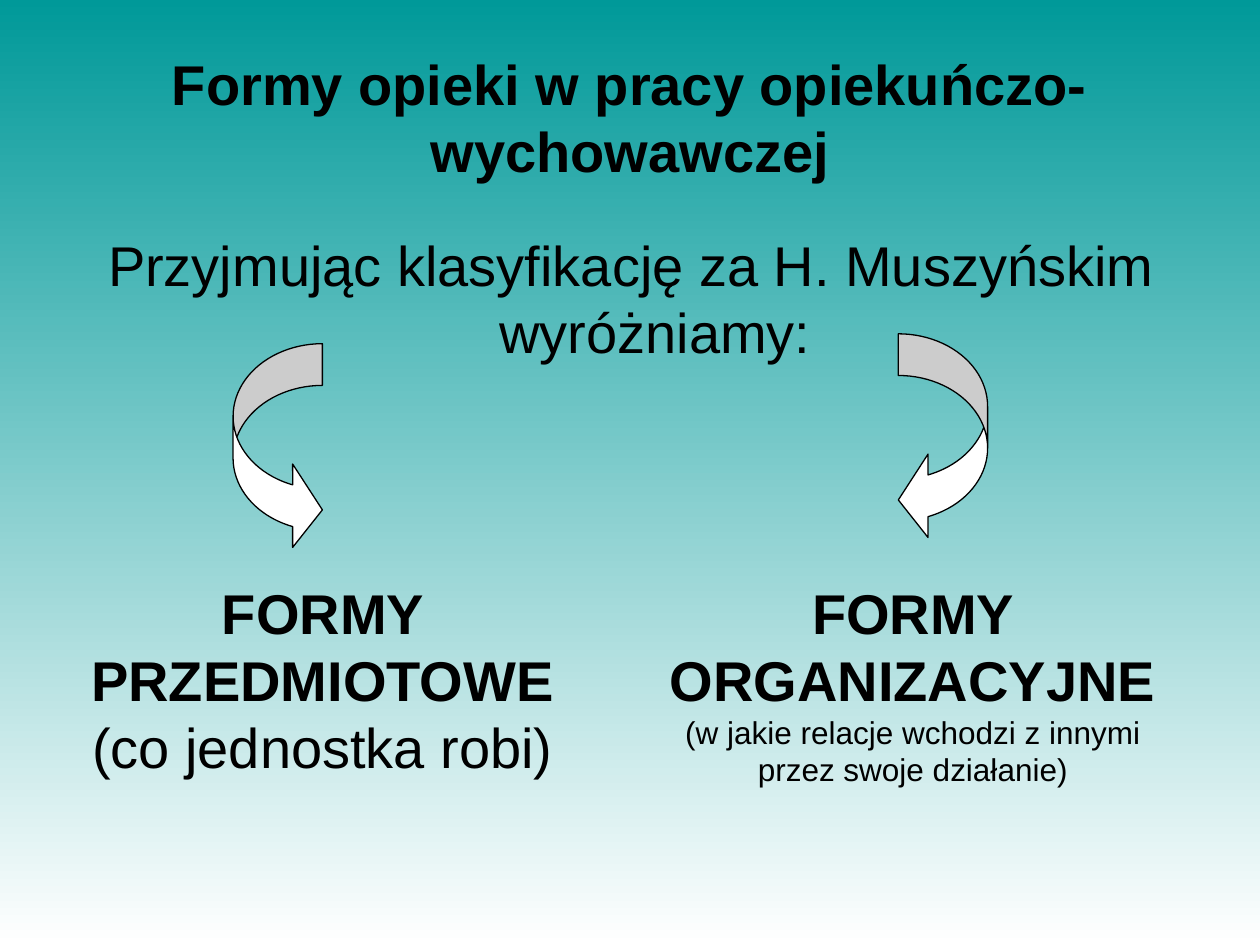
from dataclasses import dataclass

from pptx import Presentation
from pptx.dml.color import RGBColor
from pptx.enum.shapes import MSO_SHAPE
from pptx.enum.text import MSO_ANCHOR, PP_ALIGN
from pptx.util import Cm, Pt


@dataclass(frozen=True)
class Theme:
    font: str = "Arial"
    text: RGBColor = RGBColor(0x00, 0x00, 0x00)
    teal: RGBColor = RGBColor(0x00, 0x99, 0x99)
    white: RGBColor = RGBColor(0xFF, 0xFF, 0xFF)
    large: Pt = Pt(32)
    small: Pt = Pt(18)
    outline: Pt = Pt(0.75)


THEME = Theme()


def paint_background(page):
    """Vertical gradient from teal down to white."""
    fill = page.background.fill
    fill.gradient()
    fill.gradient_angle = 270
    for stop, color in zip(fill.gradient_stops, (THEME.teal, THEME.white)):
        stop.color.rgb = color


def add_span(para, text, size=THEME.large, bold=False):
    span = para.add_run()
    span.text = text
    span.font.name = THEME.font
    span.font.size = size
    span.font.bold = bold
    span.font.color.rgb = THEME.text


def add_text_box(page, left, top, width, height, anchor=MSO_ANCHOR.TOP):
    """Add a wrapping text box and return its centred paragraph."""
    box = page.shapes.add_textbox(Cm(left), Cm(top), Cm(width), Cm(height))
    frame = box.text_frame
    frame.word_wrap = True
    frame.vertical_anchor = anchor
    para = frame.paragraphs[0]
    para.alignment = PP_ALIGN.CENTER
    return para


def add_form(page, left, width, name, note, note_size):
    """Bold name of a form with its explanation on the next line."""
    para = add_text_box(page, left, 11.53, width, 4.4)
    add_span(para, name, bold=True)
    para.add_line_break()
    add_span(para, note, note_size)


def add_curved_arrow(page, kind, left, top):
    arrow = page.shapes.add_shape(kind, Cm(left), Cm(top), Cm(1.8), Cm(4.19))
    for index, value in enumerate((0.467, 0.934, 0.333)):
        arrow.adjustments[index] = value
    arrow.shadow.inherit = False
    arrow.fill.solid()
    arrow.fill.fore_color.rgb = THEME.white
    arrow.line.color.rgb = THEME.text
    arrow.line.width = THEME.outline


def main():
    deck = Presentation()
    deck.slide_width, deck.slide_height = Cm(25.4), Cm(19.05)
    page = deck.slides.add_slide(deck.slide_layouts[6])
    paint_background(page)

    # Title
    title = add_text_box(page, 1.27, 0.76, 22.86, 3.18, MSO_ANCHOR.MIDDLE)
    add_span(title, "Formy opieki w pracy opiekuńczo- wychowawczej", bold=True)

    # Introduction with a hanging indent
    intro = add_text_box(page, 1.3, 4.52, 22.86, 12.57)
    properties = intro._p.get_or_add_pPr()
    properties.set("marL", str(Cm(0.95)))
    properties.set("indent", str(Cm(-0.95)))
    add_span(intro, "Przyjmując klasyfikację za H. Muszyńskim wyróżniamy:")

    # Two kinds of forms, each with its arrow
    add_curved_arrow(page, MSO_SHAPE.CURVED_RIGHT_ARROW, 4.7, 6.93)
    add_form(page, 0.51, 11.99, "FORMY PRZEDMIOTOWE",
             "(co jednostka robi)", THEME.large)
    add_curved_arrow(page, MSO_SHAPE.CURVED_LEFT_ARROW, 18.11, 6.73)
    add_form(page, 12.9, 11, "FORMY ORGANIZACYJNE",
             "(w jakie relacje wchodzi z innymi przez swoje działanie)",
             THEME.small)

    deck.save("out.pptx")


if __name__ == "__main__":
    main()
